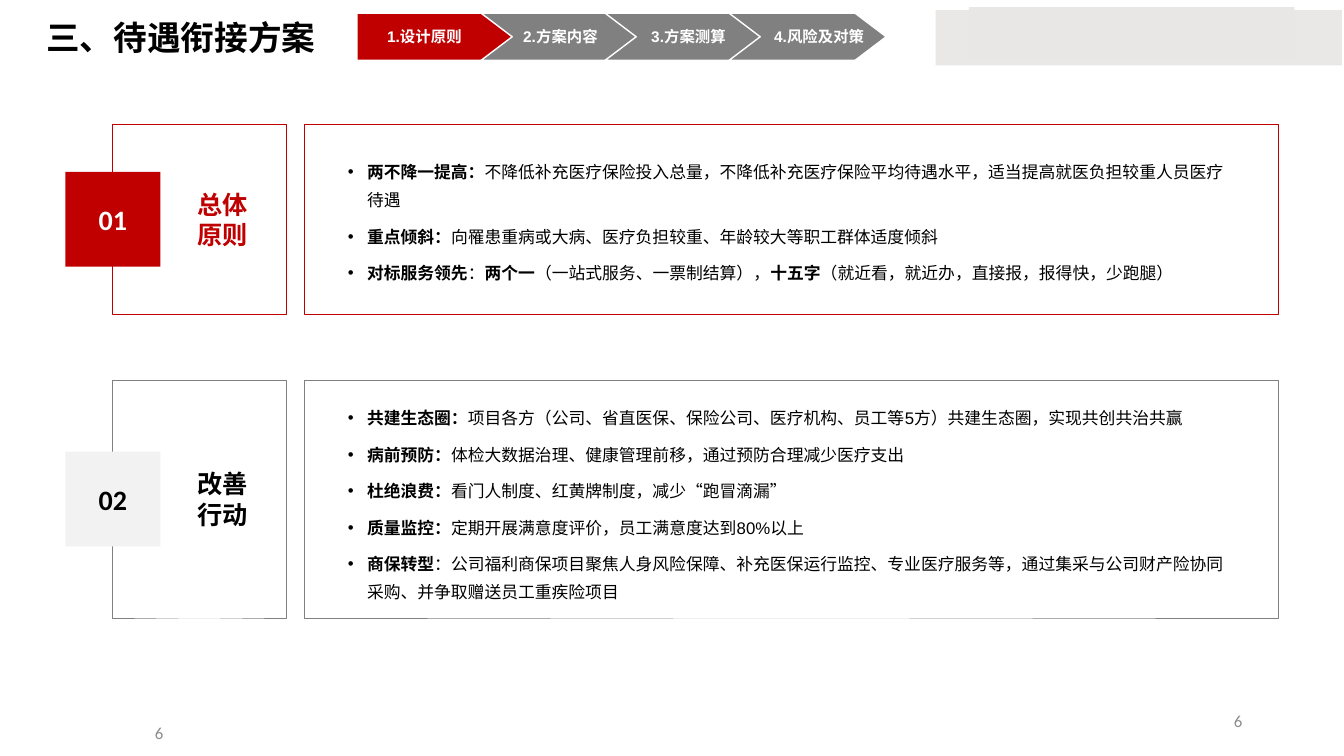
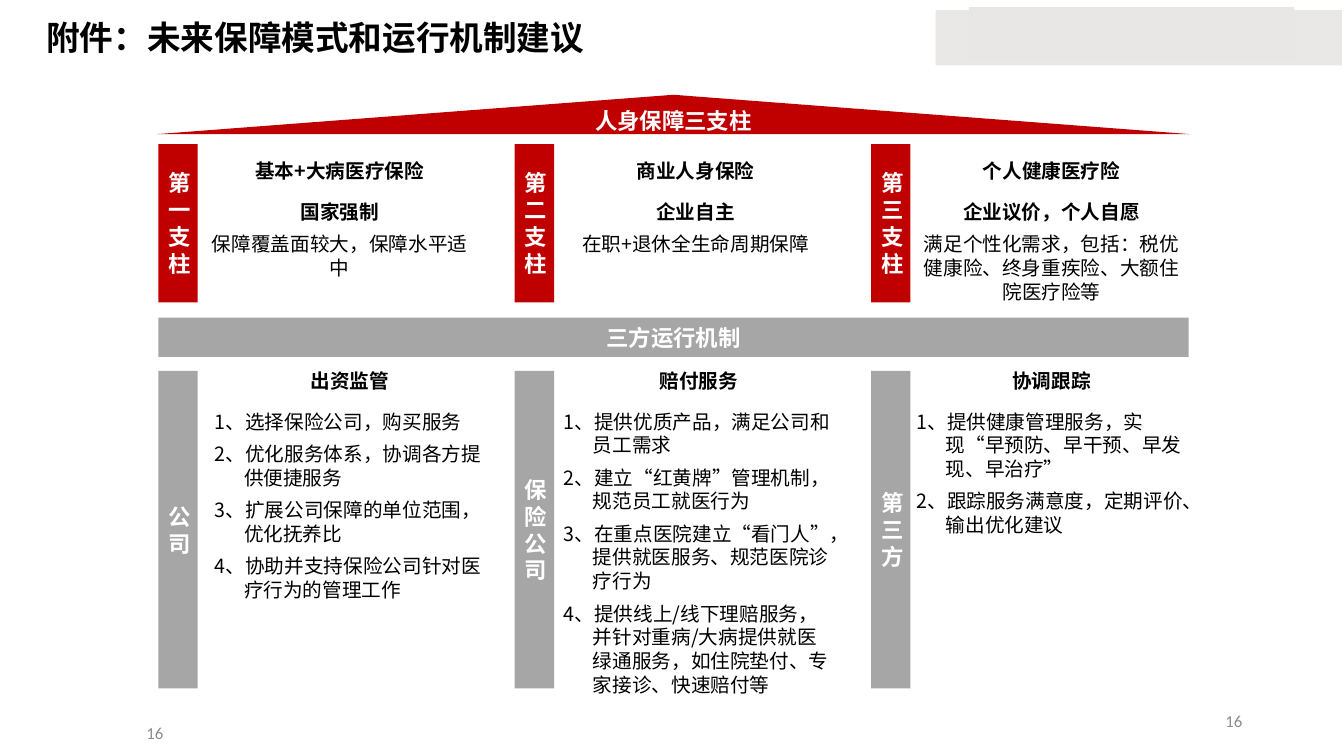
"""Build two slides on a medical benefit plan and its operating model."""
from lxml import etree
from pptx import Presentation
from pptx.dml.color import RGBColor
from pptx.enum import shapes, text
from pptx.oxml.ns import qn
from pptx.util import Inches, Pt

RED, GREY, SILVER, PALE = "C00000", "808080", "A6A6A6", "F2F2F2"
BLACK, WHITE, PAGE_GREY = "000000", "FFFFFF", "8C8C8C"
CJK = "Noto Sans CJK SC"
RECT = shapes.MSO_SHAPE.RECTANGLE
LEFT, CENTER, RIGHT = text.PP_ALIGN.LEFT, text.PP_ALIGN.CENTER, text.PP_ALIGN.RIGHT
TOP, MIDDLE, BOTTOM = text.MSO_ANCHOR.TOP, text.MSO_ANCHOR.MIDDLE, text.MSO_ANCHOR.BOTTOM


def box(slide, kind, at, fill=None, line=None, weight=0.25):
    """Add a text box (kind None) or a flat preset shape."""
    area = [Inches(length) for length in at]
    if kind is None:
        return slide.shapes.add_textbox(*area)
    shape = slide.shapes.add_shape(kind, *area)
    shape.shadow.inherit = False
    if fill:
        shape.fill.solid()
        shape.fill.fore_color.rgb = RGBColor.from_string(fill)
    else:
        shape.fill.background()
    if line:
        shape.line.color.rgb = RGBColor.from_string(line)
        shape.line.width = Pt(weight)
    else:
        shape.line.fill.background()
    return shape


def write(shape, lines, size, color=BLACK, font=CJK, bold=False, align=LEFT, anchor=TOP,
          leading=None, after=0, indent=0, bullet=None, side=0.1, wrap=True):
    """Fill a shape with paragraphs; "|" switches between bold and regular."""
    frame = shape.text_frame
    frame.text = "\n".join(lines)
    frame.word_wrap = wrap
    frame.auto_size = text.MSO_AUTO_SIZE.NONE
    frame.vertical_anchor = anchor
    frame.margin_left = frame.margin_right = Inches(side)
    frame.margin_top = frame.margin_bottom = Inches(0.05)
    for paragraph in frame.paragraphs:
        properties = paragraph._p.get_or_add_pPr()
        properties.set("marL", str(Inches(indent)))
        properties.set("indent", str(-Inches(indent)))
        if bullet:
            etree.SubElement(properties, qn("a:buFont"), typeface="Arial")
            etree.SubElement(properties, qn("a:buChar"), char=bullet)
        else:
            etree.SubElement(properties, qn("a:buNone"))
        paragraph.alignment = align
        paragraph.line_spacing = Pt(leading or size * 1.2)
        paragraph.space_before = Pt(0)
        paragraph.space_after = Pt(after)
        first, *rest = paragraph.text.split("|")
        paragraph.text = first
        for part in rest:
            paragraph.add_run().text = part
        for order, run in enumerate(paragraph.runs):
            run.font.size = Pt(size)
            run.font.bold = bold and order % 2 == 0
            run.font.color.rgb = RGBColor.from_string(color)
            run.font.name = font
            run_properties = run._r.get_or_add_rPr()
            run_properties.set("lang", "zh-CN")
            etree.SubElement(run_properties, qn("a:ea"), typeface=CJK)


prs = Presentation()
prs.slide_width, prs.slide_height = Inches(13.33), Inches(7.5)
plan = prs.slides.add_slide(prs.slide_layouts[3])
outlook = prs.slides.add_slide(prs.slide_layouts[4])

for at, fill in [((9.28, 0.1, 4.03, 0.55), "E9E8E7"), ((9.61, 0.07, 3.23, 0.52), "E8E7E6")]:
    band = box(plan, RECT, at, fill)
    prs.slide_master.shapes.element.append(band.element)

for slide, heading, page in [(plan, "三、待遇衔接方案", "6"),
                             (outlook, "附件：未来保障模式和运行机制建议", "16")]:
    title = slide.shapes.title
    title.left, title.top, title.width, title.height = map(Inches, (0.36, 0.13, 7.66, 0.47))
    write(title, [heading], 24, font="Arial", bold=True, anchor=MIDDLE)
    for at in [(9.42, 6.95, 3, 0.4), (0.33, 7.07, 1.39, 0.4)]:
        write(box(slide, None, at), [page], 12, PAGE_GREY, "Calibri", align=RIGHT, anchor=MIDDLE)

steps = [("1.设计原则", 3.73, 0.96), ("2.方案内容", 5.08, 0.96),
         ("3.方案测算", 6.35, 0.96), ("4.风险及对策", 7.57, 1.11)]
for order, (step, left, width) in enumerate(steps):
    kind = shapes.MSO_SHAPE.CHEVRON if order else shapes.MSO_SHAPE.PENTAGON
    arrow = box(plan, kind, (3.54 + 1.23 * order, 0.13, 1.56, 0.47),
                GREY if order else RED, WHITE, 1)
    arrow.adjustments[0] = 0.66
    write(box(plan, None, (left, 0.24, width, 0.27)), [step], 11, WHITE, "Arial",
          bold=True, align=CENTER, leading=12)

sections = [
    ("01", ["总体", "原则"], 1.23, 1.89, RED, RED, RED, WHITE, 1.48, 1.39, [
        "两不降一提高：|不降低补充医疗保险投入总量，不降低补充医疗保险平均待遇水平，适当提高就医负担较重人员医疗待遇",
        "重点倾斜：|向罹患重病或大病、医疗负担较重、年龄较大等职工群体适度倾斜",
        "对标服务领先|：|两个一|（一站式服务、一票制结算），|十五字|（就近看，就近办，直接报，报得快，少跑腿）",
    ]),
    ("02", ["改善", "行动"], 3.77, 2.36, GREY, BLACK, PALE, BLACK, 3.92, 2.12, [
        "共建生态圈：|项目各方（公司、省直医保、保险公司、医疗机构、员工等5方）共建生态圈，实现共创共治共赢",
        "病前预防：|体检大数据治理、健康管理前移，通过预防合理减少医疗支出",
        "杜绝浪费：|看门人制度、红黄牌制度，减少“跑冒滴漏”",
        "质量监控：|定期开展满意度评价，员工满意度达到80%以上",
        "商保转型|：公司福利商保项目聚焦人身风险保障、补充医保运行监控、专业医疗服务等，通过集采与公司财产险协同采购、并争取赠送员工重疾险项目",
    ]),
]
plan_bodies = list(plan.placeholders)[1:]
for section, body in zip(sections, plan_bodies):
    (number, topic, top, height, outline, topic_color,
     tile, number_color, list_top, list_height, points) = section
    middle = top + height / 2
    for left, width in [(1.11, 1.73), (3.02, 9.66)]:
        box(plan, RECT, (left, top, width, height), line=outline)
    write(box(plan, RECT, (0.65, middle - 0.47, 0.94, 0.94), tile), [number], 20,
          number_color, "Calibri", bold=True, align=CENTER, anchor=MIDDLE)
    write(box(plan, None, (1.86, middle - 0.35, 0.71, 0.71)), topic, 18, topic_color,
          "Calibri", bold=True, wrap=False)
    body.left, body.top, body.width, body.height = map(
        Inches, (3.35, list_top, 8.99, list_height))
    write(body, points, 12, font="Arial", bold=True, leading=20, after=6,
          indent=0.19, bullet="•")

roof = box(outlook, shapes.MSO_SHAPE.ISOSCELES_TRIANGLE, (1.56, 0.94, 10.24, 0.39), RED)
write(roof, ["人身保障三支柱"], 16, WHITE, bold=True, align=CENTER, anchor=BOTTOM)
roof.text_frame.margin_top = roof.text_frame.margin_bottom = 0
write(box(outlook, RECT, (1.57, 3.15, 10.22, 0.39), SILVER), ["三方运行机制"], 16, WHITE,
      bold=True, align=CENTER, anchor=MIDDLE)

pillars = [
    ("第一支柱", "基本+大病医疗保险", "国家强制", "保障覆盖面较大，保障水平适中"),
    ("第二支柱", "商业人身保险", "企业自主", "在职+退休全生命周期保障"),
    ("第三支柱", "个人健康医疗险", "企业议价，个人自愿",
     "满足个性化需求，包括：税优健康险、终身重疾险、大额住院医疗险等"),
]
parties = [
    ("公司", "出资监管", 2.09, 2, [
        "1、选择保险公司，购买服务",
        "2、优化服务体系，协调各方提供便捷服务",
        "3、扩展公司保障的单位范围，优化抚养比",
        "4、协助并支持保险公司针对医疗行为的管理工作",
    ]),
    ("保险公司", "赔付服务", 5.55, 2.95, [
        "1、提供优质产品，满足公司和员工需求",
        "2、建立“红黄牌”管理机制，规范员工就医行为",
        "3、在重点医院建立“看门人”，提供就医服务、规范医院诊疗行为",
        "4、提供线上/线下理赔服务，并针对重病/大病提供就医绿通服务，如住院垫付、专家接诊、快速赔付等",
    ]),
    ("第三方", "协调跟踪", 9.05, 1.36, [
        "1、提供健康管理服务，实现“早预防、早干预、早发现、早治疗”",
        "2、跟踪服务满意度，定期评价、输出优化建议",
    ]),
]
*duty_bodies, spare = list(outlook.placeholders)[1:]
spare.element.getparent().remove(spare.element)
for order, (pillar, party, body) in enumerate(zip(pillars, parties, duty_bodies)):
    pillar_name, cover, basis, benefit = pillar
    party_name, role, role_left, duties_height, duties = party
    post_left, cover_left = 1.57 + 3.535 * order, 1.99 + 3.53 * order
    for name, top, height, fill in [(pillar_name, 1.43, 1.57, RED),
                                    (party_name, 3.68, 3.15, SILVER)]:
        write(box(outlook, RECT, (post_left, top, 0.39, height), fill), [name], 16, WHITE,
              bold=True, align=CENTER, anchor=MIDDLE)
    for heading, left, top in [(cover, cover_left, 1.53), (role, role_left, 3.61)]:
        write(box(outlook, None, (left, top, 2.76, 0.34)), [heading], 14,
              bold=True, align=CENTER)
    summary = box(outlook, None, (cover_left, 1.93, 2.76, 1.13))
    write(summary, [basis, benefit], 14, bold=True, align=CENTER, leading=17, after=6, side=0.04)
    summary.text_frame.paragraphs[1].runs[0].font.bold = False
    body.left, body.top, body.width, body.height = map(
        Inches, (role_left, 4.01, 2.76, duties_height))
    write(body, duties, 14, leading=17, after=6, indent=0.29, side=0.04)

prs.save("out.pptx")
